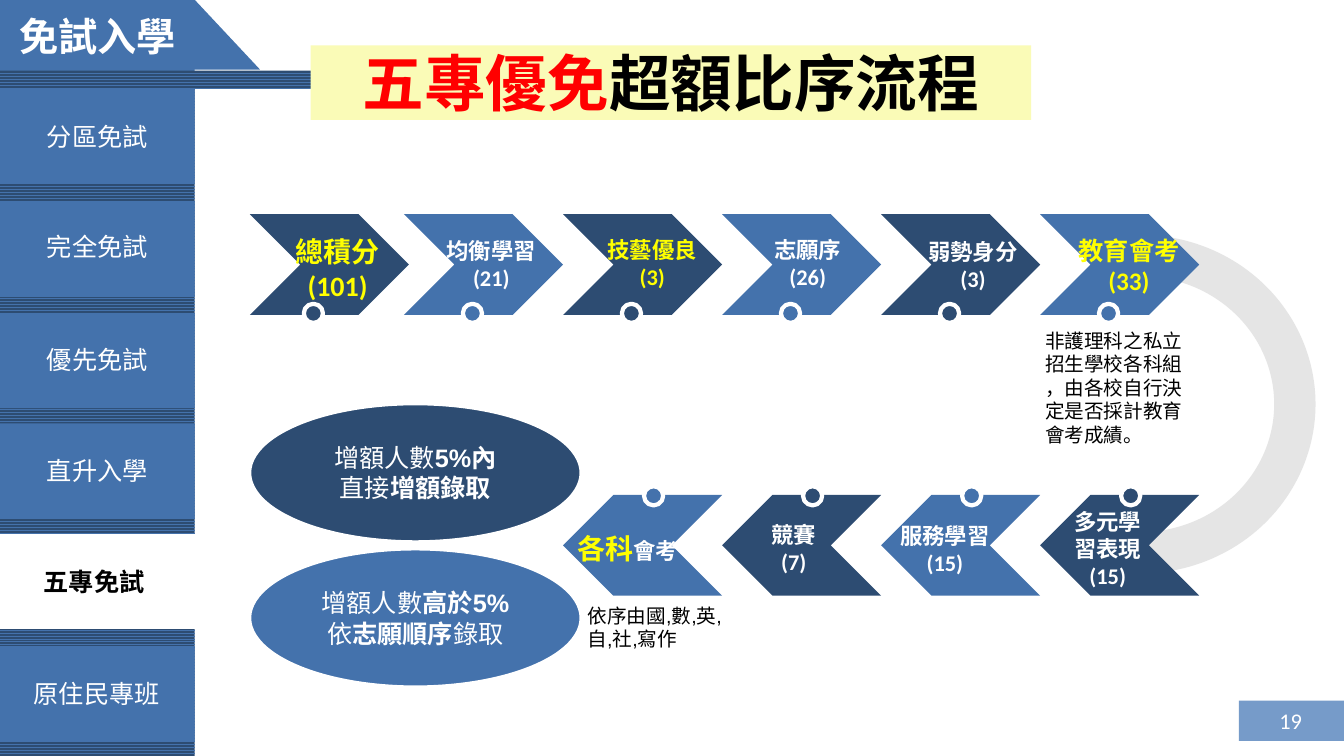
from pptx import Presentation
from pptx.dml.color import RGBColor
from pptx.enum import dml, shapes, text
from pptx.util import Pt

COLORS = {
    "blue": "4472AC", "navy": "2D4C72", "pale": "769BC9", "arc": "E5E5E5",
    "cream": "FAFBB7", "white": "FFFFFF", "black": "000000",
    "red": "FF0000", "yellow": "FFFF00",
}
KIND = shapes.MSO_SHAPE
CENTER, LEFT = text.PP_ALIGN.CENTER, text.PP_ALIGN.LEFT
MIDDLE, TOP = text.MSO_ANCHOR.MIDDLE, text.MSO_ANCHOR.TOP

# Step grid
COLUMN_X, PITCH = 175, 113.6
CHEVRON_W, CHEVRON_H, DOT = 113.6, 72, 13.7


def rgb(name):
    return RGBColor.from_string(COLORS[name])


def style(font, size=None, color=None, bold=None, name=None):
    if size:
        font.size = Pt(size)
    if color:
        font.color.rgb = rgb(color)
    if bold is not None:
        font.bold = bold
    if name:
        font.name = name


def write(frame, lines, size, color="white", bold=False, name="Calibri",
          align=CENTER, anchor=TOP, wrap=True):
    """Each line is a string, or a list of (text, font overrides) runs."""
    frame.word_wrap = wrap
    frame.vertical_anchor = anchor
    for i, line in enumerate(lines):
        paragraph = frame.paragraphs[0] if i == 0 else frame.add_paragraph()
        paragraph.alignment = align
        style(paragraph.font, size, color, bold, name)
        for words, overrides in [(line, {})] if isinstance(line, str) else line:
            run = paragraph.add_run()
            run.text = words
            style(run.font, **overrides)


def block(slide, kind, x, y, w, h, fill, outlined=False):
    item = slide.shapes.add_shape(kind, Pt(x), Pt(y), Pt(w), Pt(h))
    item.shadow.inherit = False
    item.fill.solid()
    item.fill.fore_color.rgb = rgb(fill)
    if outlined:
        item.line.color.rgb = rgb("white")
        item.line.width = Pt(3)
    else:
        item.line.fill.background()
    return item


def striped(slide, x, y, w, h):
    band = block(slide, KIND.RECTANGLE, x, y, w, h, "blue")
    band.fill.patterned()
    band.fill.pattern = dml.MSO_PATTERN.ZIG_ZAG
    band.fill.fore_color.rgb = rgb("blue")
    band.fill.back_color.rgb = rgb("navy")


def label(slide, x, y, w, h, lines, size, **options):
    box = slide.shapes.add_textbox(Pt(x), Pt(y), Pt(w), Pt(h))
    write(box.text_frame, lines, size, **options)


def step(slide, column, backward, fill, center_x, y, lines, size, color="white"):
    """A chevron with its dot and caption; the lower row points backward."""
    x = COLUMN_X + column * PITCH
    # The first step stands slightly right of its column
    chevron_x = x + 3.5 if column == 0 else x
    chevron = block(slide, KIND.CHEVRON, chevron_x, 353.5 if backward else 153,
                    CHEVRON_W, CHEVRON_H, fill)
    chevron.rotation = 180 if backward else 0
    dot_x, dot_y = (x + 57.8, 347.3) if backward else (x + 42, 217)
    block(slide, KIND.OVAL, dot_x, dot_y, DOT, DOT, fill, outlined=True)
    label(slide, center_x - 44, y, 88, 46, lines, size,
          color=color, bold=True, wrap=False)


def sidebar(slide):
    block(slide, KIND.ISOSCELES_TRIANGLE, 91.4, -0.7, 94.3, 50.4, "blue")
    heading = block(slide, KIND.RECTANGLE, 0, -0.7, 139, 53.3, "blue")
    write(heading.text_frame, ["免試入學"], 28, bold=True, anchor=MIDDLE)
    striped(slide, 0, 61.9, 139, 478.1)
    striped(slide, 0, 50.4, 339.8, 13)

    # top of tab, caption centre, caption top, caption
    tabs = [
        (63.4, 69.5, 82.8, "分區免試"),
        (144.4, 69.5, 162, "完全免試"),
        (223.9, 69.5, 242.6, "優先免試"),
        (302.4, 69.5, 321.8, "直升入學"),
        (381.6, 67.3, 401, "五專免試"),
        (461.5, 69.1, 481, "原住民專班"),
    ]
    for y, center_x, caption_y, caption in tabs:
        current = caption == "五專免試"
        block(slide, KIND.RECTANGLE, 0, y, 152 if current else 139, 67.7,
              "white" if current else "blue")
        label(slide, center_x - 52.5, caption_y, 105, 29, [caption], 18,
              color="black" if current else "white", bold=current, wrap=False)


def title(slide):
    banner = block(slide, KIND.RECTANGLE, 221.8, 32.4, 514.8, 53.3, "cream")
    frame = banner.text_frame
    frame.margin_left = frame.margin_right = 0
    frame.margin_top = frame.margin_bottom = 0
    write(frame, [[("五專優免", {"color": "red"}), ("超額比序流程", {"color": "black"})]],
          44, bold=True)


def outcomes(slide):
    strong = {"bold": True}
    results = [
        (288, "navy", [[("增額人數", {}), ("5%內", strong)],
                       [("直接", {}), ("增額錄取", strong)]]),
        (391.7, "blue", [[("增額人數", {}), ("高於5%", strong)],
                         [("依", {}), ("志願順序", strong), ("錄取", {})]]),
    ]
    for y, fill, lines in results:
        oval = block(slide, KIND.OVAL, 178, y, 237.5, 99.4, fill, outlined=True)
        write(oval.text_frame, lines, 18, name="Arial", anchor=MIDDLE)


def flow(slide):
    turn = block(slide, KIND.BLOCK_ARC, 693.4, 163.4, 241.9, 250.6, "arc")
    turn.rotation = 90
    for i, value in enumerate((108, 0.415, 0.122)):
        turn.adjustments[i] = value

    # Upper row, left to right
    step(slide, 0, False, "navy", 241.2, 164.2, ["總積分", "(101)"], 20, "yellow")
    step(slide, 1, False, "blue", 351, 165.6, ["均衡學習", "(21)"], 16)
    step(slide, 2, False, "navy", 466, 164.9, ["技藝優良", "(3)"], 16, "yellow")
    step(slide, 3, False, "blue", 577, 164.9, ["志願序", "(26)"], 16)
    step(slide, 4, False, "navy", 695, 166.3, ["弱勢身分", "(3)"], 16)
    step(slide, 5, False, "blue", 806.5, 164.2, ["教育會考", "(33)"], 18, "yellow")

    # Lower row, right to left
    step(slide, 5, True, "navy", 791.3, 359.3, ["多元學", "習表現", "(15)"], 16)
    step(slide, 4, True, "blue", 675, 369.4, ["服務學習", "(15)"], 16)
    step(slide, 3, True, "navy", 567, 368.6, ["競賽", "(7)"], 16)
    step(slide, 2, True, "blue", 448.2, 375.8,
         [[("各科", {"size": 20, "color": "yellow"}),
           ("會考", {"size": 16, "color": "white"})]], 16)


def notes_beside_steps(slide):
    comma = (",", {"name": "Arial"})
    label(slide, 412.6, 427.7, 110.9, 41,
          [[("依序由國", {}), comma, ("數", {}), comma, ("英", {}), comma],
           [("自", {}), comma, ("社", {}), comma, ("寫作", {})]],
          14, color="black", align=LEFT)
    label(slide, 739.4, 231.1, 113.8, 92.2,
          ["非護理科之私立", "招生學校各科組", "，由各校自行決", "定是否採計教育", "會考成績。"],
          14, color="black", align=LEFT)


def page_number(slide):
    block(slide, KIND.RECTANGLE, 884.9, 500.4, 75.1, 28.8, "pale")
    label(slide, 904.3, 500.4, 35.3, 28.8, ["19"], 16, anchor=MIDDLE)


def main():
    deck = Presentation()
    deck.slide_width, deck.slide_height = Pt(960), Pt(540)
    slide = deck.slides.add_slide(deck.slide_layouts[6])
    sidebar(slide)
    title(slide)
    outcomes(slide)
    flow(slide)
    notes_beside_steps(slide)
    page_number(slide)
    deck.save("out.pptx")


if __name__ == "__main__":
    main()
